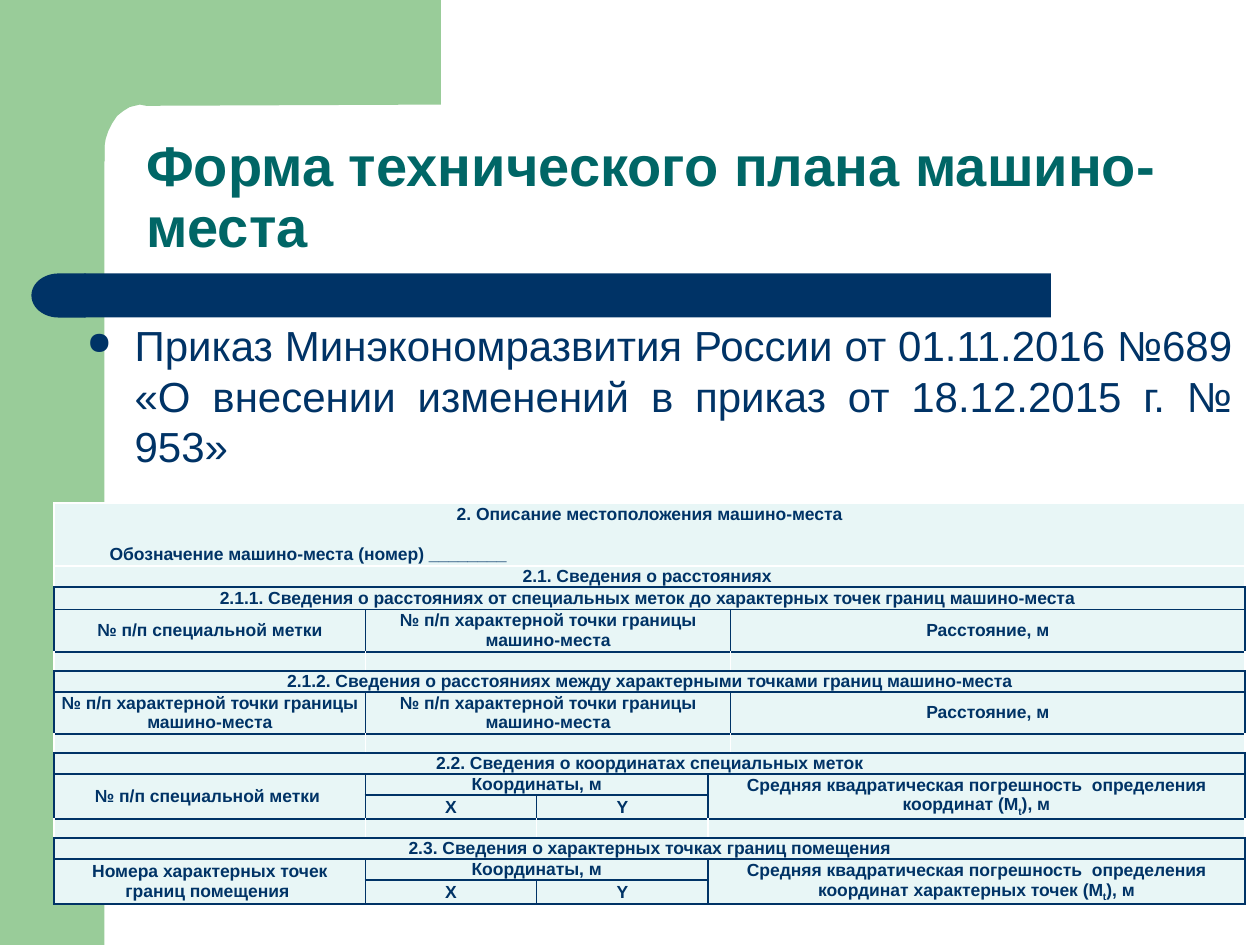
from lxml import etree
from pptx import Presentation
from pptx.dml.color import RGBColor
from pptx.enum.shapes import MSO_SHAPE
from pptx.enum.text import MSO_ANCHOR, PP_ALIGN
from pptx.oxml.ns import qn
from pptx.util import Inches, Pt

RECTANGLE, DELAY = MSO_SHAPE.RECTANGLE, MSO_SHAPE.FLOWCHART_DELAY
MIDDLE, TOP = MSO_ANCHOR.MIDDLE, MSO_ANCHOR.TOP
LEFT, CENTER, JUSTIFY = PP_ALIGN.LEFT, PP_ALIGN.CENTER, PP_ALIGN.JUSTIFY

COLORS = {"green": "99CC99", "navy": "003366", "teal": "006666",
          "pale": "E8F6F6", "white": "FFFFFF"}
FONT = "Arial"

TITLE = "Форма технического плана машино-места"
ORDER = ("Приказ Минэкономразвития России от 01.11.2016 №689 "
         "«О внесении изменений в приказ от 18.12.2015 г. № 953»")

MARK = "№ п/п специальной метки"
POINT = "№ п/п характерной точки границы машино-места"
DISTANCE = "Расстояние, м"
ERROR = "Средняя квадратическая погрешность  определения координат"

COLUMNS = [2.47, 1.36, 1.36, 0.18, 4.08]


def section(text, height=0.16, space=3, edges="nnnn"):
    return height, space, edges, [(0, 5, 1, text)]


def distances(first):
    return 0.31, 3, "nnnn", [(0, 1, 1, first), (1, 3, 1, POINT), (4, 1, 1, DISTANCE)]


def spacer(*spans):
    return 0.15, 0, "wnwn", [(column, width, 1, "") for column, width in spans]


def coordinates(first, error):
    """Two header rows: the outer cells span both, X and Y share a heading."""
    return [(0.16, 0, "nnnn", [(0, 1, 2, first), (1, 2, 1, "Координаты, м"),
                               (3, 2, 2, error)]),
            (0.17, 0, "nnnn", [(1, 1, 1, "Х"), (2, 1, 1, "Y")])]


# Each row: height, paragraph spacing, edge colours (left, top, right, bottom),
# cells as (column, columns spanned, rows spanned, text); "|" encloses a subscript
ROWS = [
    section("2. Описание местоположения машино-места\n"
            "Обозначение машино-места (номер) ________", 0.48, 6, "wwww"),
    section("2.1. Сведения о расстояниях ", edges="wwwn"),
    section("2.1.1. Сведения о расстояниях от специальных меток "
            "до характерных точек границ машино-места ", 0.18),
    distances(MARK),
    spacer((0, 1), (1, 3), (4, 1)),
    section("2.1.2. Сведения о расстояниях между характерными точками границ машино-места"),
    distances(POINT),
    spacer((0, 1), (1, 3), (4, 1)),
    section("2.2. Сведения о координатах специальных меток"),
    *coordinates(MARK + " ", ERROR + " (М|t|), м"),
    spacer((0, 1), (1, 1), (2, 1), (3, 2)),
    section("2.3. Сведения о характерных точках границ помещения", space=6),
    *coordinates("Номера характерных точек границ помещения ",
                 ERROR + " характерных точек (М|t|), м"),
]

# Green corner with its rounded inner edge
CORNER = [(3.5, 0), (3.5, 0.83), (1.16, 0.84), (1.11, 0.83), (1.03, 0.85),
          (0.98, 0.88), (0.93, 0.92), (0.89, 0.98), (0.86, 1.04), (0.84, 1.1),
          (0.83, 1.16), (0.83, 1.28), (0.5, 1.28), (0.5, 0)]


def rgb(name):
    return RGBColor.from_string(COLORS[name])


def paint(shape, color):
    shape.fill.solid()
    shape.fill.fore_color.rgb = rgb(color)
    shape.line.fill.background()
    shape.shadow.inherit = False


def style(span, size, color, bold=False):
    span.font.name = FONT
    span.font.size = Pt(size)
    span.font.bold = bold
    span.font.color.rgb = rgb(color)


def indent(para, margin, first=0):
    properties = para._p.get_or_add_pPr()
    properties.set("marL", str(Inches(margin)))
    properties.set("indent", str(Inches(first)))
    return properties


def add_edges(cell, edges):
    """Draw 1 pt borders; w is white, n is navy."""
    properties = cell._tc.get_or_add_tcPr()
    for position, (side, code) in enumerate(zip("LTRB", edges)):
        line = etree.Element(qn(f"a:ln{side}"), w=str(Pt(1)))
        fill = etree.SubElement(line, qn("a:solidFill"))
        etree.SubElement(fill, qn("a:srgbClr"),
                         val=COLORS["white" if code == "w" else "navy"])
        properties.insert(position, line)


def write_cell(cell, text, space):
    cell.vertical_anchor = MIDDLE
    cell.margin_left = cell.margin_right = Inches(0.05)
    cell.margin_top = cell.margin_bottom = 0
    if not text:
        etree.SubElement(cell.text_frame.paragraphs[0]._p, qn("a:endParaRPr"), sz="900")
        return
    for number, line in enumerate(text.split("\n")):
        frame = cell.text_frame
        para = frame.add_paragraph() if number else frame.paragraphs[0]
        para.alignment = LEFT if number else CENTER
        para.space_before = para.space_after = Pt(space)
        if number:
            indent(para, 0.39)
        for part, words in enumerate(line.split("|")):
            span = para.add_run()
            span.text = words
            style(span, 10, "navy", True)
            if part % 2:
                span._r.get_or_add_rPr().set("baseline", "-25000")


def add_decoration(page):
    def add(kind, left, top, width, height, color):
        shape = page.shapes.add_shape(kind, Inches(left), Inches(top),
                                      Inches(width), Inches(height))
        paint(shape, color)
        return shape

    add(RECTANGLE, 0, 0, 0.83, 7.5, "green")
    points = [(Inches(x), Inches(y)) for x, y in CORNER]
    builder = page.shapes.build_freeform(*points[0])
    builder.add_line_segments(points[1:], close=True)
    paint(builder.convert_to_shape(), "green")
    add(RECTANGLE, 0.67, 2.17, 7.67, 0.35, "navy")
    cap = add(DELAY, 0.25, 2.17, 0.43, 0.35, "navy")
    cap._element.spPr.find(qn("a:xfrm")).set("flipH", "1")


def add_title(page):
    title = page.shapes.title
    title.left, title.top = Inches(1.06), Inches(0.99)
    title.width, title.height = Inches(8.82), Inches(1.18)
    title.text_frame.text = TITLE
    title.text_frame.vertical_anchor = MIDDLE
    para = title.text_frame.paragraphs[0]
    para.alignment = LEFT
    para.line_spacing = 0.9
    style(para.runs[0], 32, "teal", True)


def add_order(page):
    box = page.shapes.add_textbox(Inches(0.59), Inches(2.49), Inches(9.29), Inches(4.88))
    frame = box.text_frame
    frame.word_wrap = True
    frame.vertical_anchor = TOP
    frame.text = ORDER
    para = frame.paragraphs[0]
    para.alignment = JUSTIFY
    style(para.runs[0], 24, "navy")
    properties = indent(para, 0.38, -0.38)
    color = etree.SubElement(properties, qn("a:buClr"))
    etree.SubElement(color, qn("a:srgbClr"), val=COLORS["navy"])
    etree.SubElement(properties, qn("a:buSzPct"), val="75000")
    etree.SubElement(properties, qn("a:buChar"), char="●")


def add_form(page):
    height = sum(row[0] for row in ROWS)
    table = page.shapes.add_table(len(ROWS), len(COLUMNS), Inches(0.43), Inches(3.99),
                                  Inches(sum(COLUMNS)), Inches(height)).table
    table.first_row = table.horz_banding = False
    for column, width in zip(table.columns, COLUMNS):
        column.width = Inches(width)
    for top, (height, space, edges, cells) in enumerate(ROWS):
        table.rows[top].height = Inches(height)
        for cell in table.rows[top].cells:
            cell.fill.solid()
            cell.fill.fore_color.rgb = rgb("pale")
            add_edges(cell, edges)
        for left, across, down, text in cells:
            cell = table.cell(top, left)
            if across * down > 1:
                cell.merge(table.cell(top + down - 1, left + across - 1))
            write_cell(cell, text, space)


deck = Presentation()
deck.slide_width, deck.slide_height = Inches(10), Inches(7.5)
page = deck.slides.add_slide(deck.slide_layouts[5])
add_decoration(page)
add_title(page)
add_order(page)
add_form(page)
deck.save("out.pptx")
